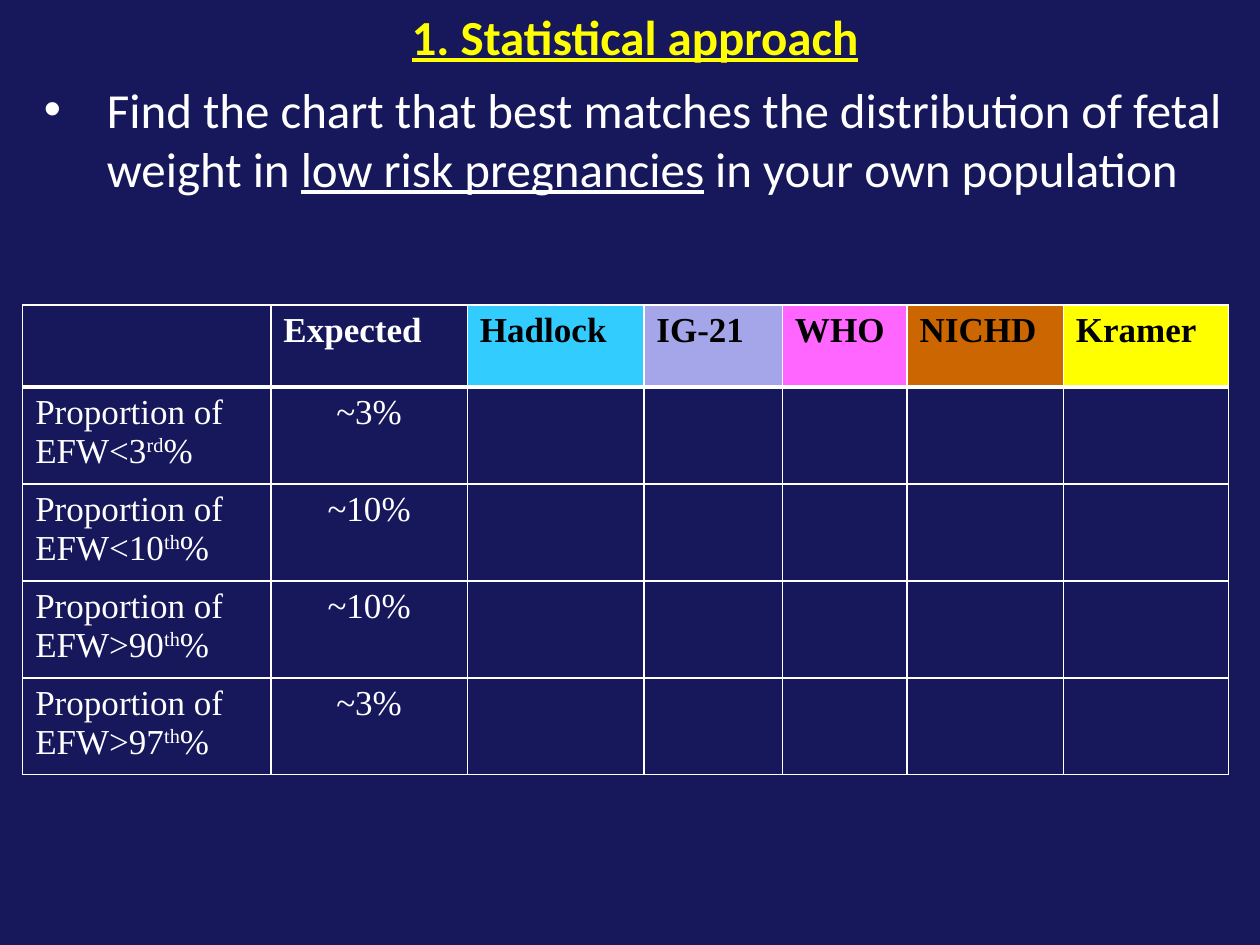
from lxml import etree
from pptx import Presentation
from pptx.dml.color import RGBColor
from pptx.enum.text import PP_ALIGN
from pptx.oxml.ns import qn
from pptx.util import Inches, Pt

LEFT, CENTER = PP_ALIGN.LEFT, PP_ALIGN.CENTER
SANS, SERIF = "Calibri", "Times New Roman"
HEX = {
    "navy": "17175C", "white": "FFFFFF", "black": "000000",
    "yellow": "FFFF00", "cyan": "33CCFF", "lilac": "A5A5E9",
    "pink": "FF66FF", "orange": "CC6600",
}

# Header: label, fill, text colour, column width
HEADS = [
    ("", None, "white", 1.97),
    ("Expected", None, "white", 1.56),
    ("Hadlock", "cyan", "black", 1.4),
    ("IG-21", "lilac", "black", 1.1),
    ("WHO", "pink", "black", 0.99),
    ("NICHD", "orange", "black", 1.24),
    ("Kramer", "yellow", "black", 1.31),
]
# Body: limit, ordinal ending, expected share
ROWS = [
    ("EFW<3", "rd", "~3%"),
    ("EFW<10", "th", "~10%"),
    ("EFW>90", "th", "~10%"),
    ("EFW>97", "th", "~3%"),
]


def rgb(name):
    return RGBColor.from_string(HEX[name])


def style(para, face, size, color, bold=False, align=LEFT):
    font = para.font
    font.name, font.size, font.bold = face, Pt(size), bold
    font.color.rgb = rgb(color)
    para.alignment = align


def add_box(slide, x, y, w, h):
    box = slide.shapes.add_textbox(Inches(x), Inches(y), Inches(w), Inches(h))
    box.text_frame.word_wrap = True
    return box.text_frame.paragraphs[0]


def add_title(slide):
    para = add_box(slide, 0.25, 0, 9.58, 0.57)
    para.text = "1. Statistical approach"
    style(para, SANS, 28, "yellow", True, CENTER)
    para.font.underline = True


def add_bullet(slide):
    para = add_box(slide, 0.25, 0.58, 9.75, 1.04)
    style(para, SANS, 28, "white")
    for text, line in [
        ("Find the chart that best matches the distribution of fetal weight in ", False),
        ("low risk pregnancies", True),
        (" in your own population", False),
    ]:
        run = para.add_run()
        run.text = text
        run.font.underline = line
    # Hanging bullet
    props = para._p.get_or_add_pPr()
    props.set("marL", str(Inches(0.5)))
    props.set("indent", str(Inches(-0.5)))
    font = etree.Element(qn("a:buFont"), typeface="Arial")
    mark = etree.Element(qn("a:buChar"), char="•")
    props.insert_element_before(font, "a:tabLst", "a:defRPr", "a:extLst")
    props.insert_element_before(mark, "a:tabLst", "a:defRPr", "a:extLst")


def set_edges(cell, top, bottom):
    props = cell._tc.get_or_add_tcPr()
    widths = {"a:lnL": 1, "a:lnR": 1, "a:lnT": top, "a:lnB": bottom}
    for i, (tag, width) in enumerate(widths.items()):
        edge = etree.Element(qn(tag), w=str(Pt(width)))
        fill = etree.SubElement(edge, qn("a:solidFill"))
        etree.SubElement(fill, qn("a:srgbClr"), val=HEX["white"])
        props.insert(i, edge)


def fill_cell(cell, color):
    if color:
        cell.fill.solid()
        cell.fill.fore_color.rgb = rgb(color)
    else:
        cell.fill.background()


def write_limit(cell, limit, ending):
    first = cell.text_frame.paragraphs[0]
    first.text = "Proportion of"
    second = cell.text_frame.add_paragraph()
    for text in (limit, ending, "%"):
        run = second.add_run()
        run.text = text
        if text == ending:
            run.font._element.set("baseline", "30000")
    for para in (first, second):
        style(para, SERIF, 20, "white")


def add_grid(slide):
    frame = slide.shapes.add_table(
        len(ROWS) + 1, len(HEADS),
        Inches(0.18), Inches(2.42), Inches(9.57), Inches(3.73))
    table = frame.table
    table.horz_banding = False
    for r, row in enumerate(table.rows):
        row.height = Inches(0.77 if r else 0.65)

    # Header row and columns
    for c, (label, fill, color, width) in enumerate(HEADS):
        table.columns[c].width = Inches(width)
        para = table.cell(0, c).text_frame.paragraphs[0]
        para.text = label
        style(para, SERIF, 20, color, True)
        for r in range(len(ROWS) + 1):
            cell = table.cell(r, c)
            fill_cell(cell, None if r else fill)
            set_edges(cell, 3 if r == 1 else 1, 1 if r else 3)

    # Body rows
    for r, (limit, ending, share) in enumerate(ROWS, 1):
        write_limit(table.cell(r, 0), limit, ending)
        para = table.cell(r, 1).text_frame.paragraphs[0]
        para.text = share
        style(para, SERIF, 20, "white", align=CENTER)


def main():
    deck = Presentation()
    deck.slide_width, deck.slide_height = Inches(10), Inches(7.5)
    slide = deck.slides.add_slide(deck.slide_layouts[6])
    back = slide.background.fill
    back.solid()
    back.fore_color.rgb = rgb("navy")
    add_title(slide)
    add_bullet(slide)
    add_grid(slide)
    deck.save("out.pptx")


if __name__ == "__main__":
    main()
